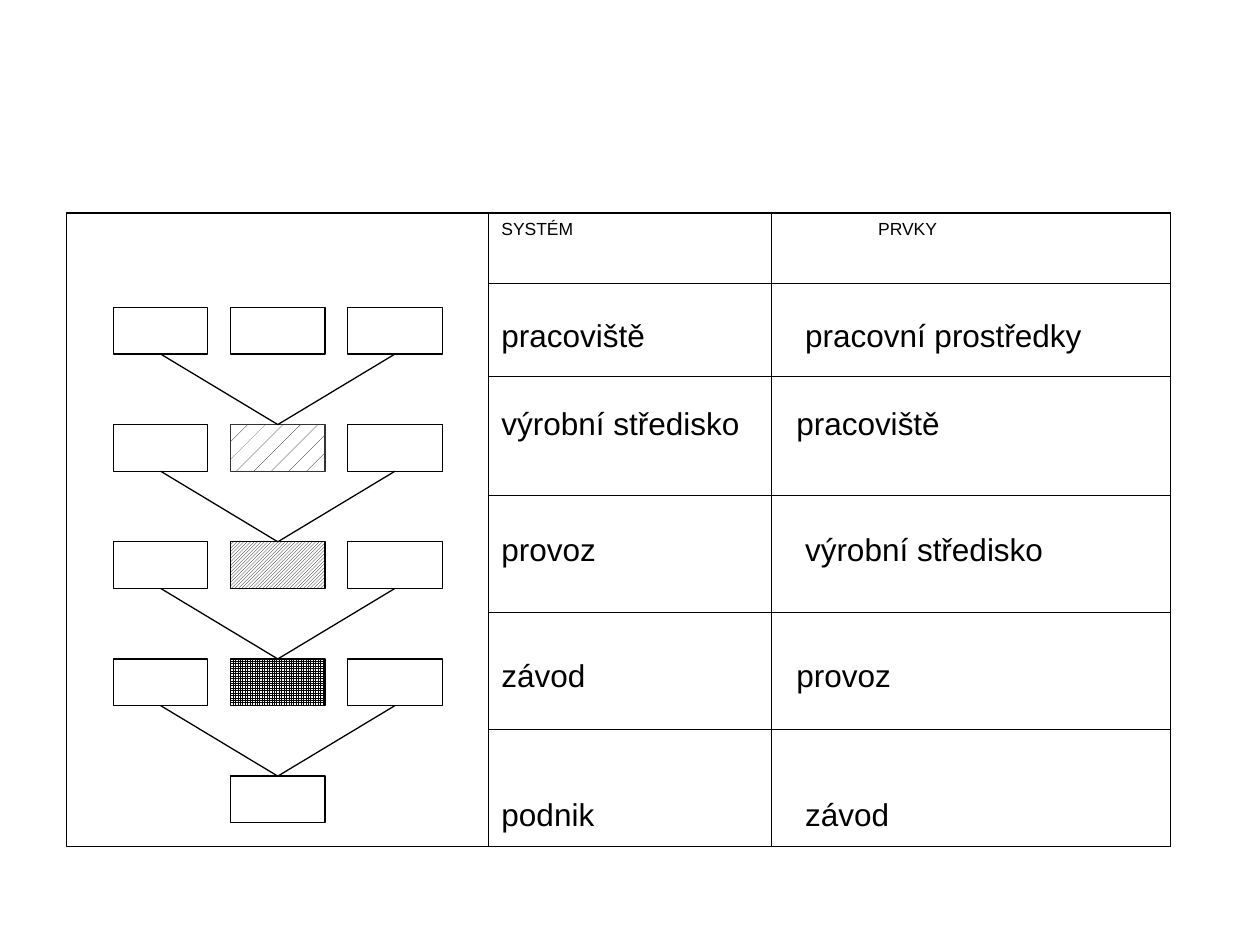
from lxml import etree
from pptx import Presentation
from pptx.dml.color import RGBColor
from pptx.enum.dml import MSO_PATTERN
from pptx.enum.shapes import MSO_CONNECTOR, MSO_SHAPE
from pptx.oxml import parse_xml
from pptx.oxml.ns import nsdecls, qn
from pptx.util import Inches, Pt


def rgb(value):
    return RGBColor.from_string(value)


def add_box(x, y, w, h, pattern=None, line="000000"):
    sp = s.shapes.add_shape(MSO_SHAPE.RECTANGLE, Inches(x), Inches(y), Inches(w), Inches(h))
    sp.shadow.inherit = False
    if pattern is None:
        sp.fill.solid()
        sp.fill.fore_color.rgb = rgb("FFFFFF")
    else:
        sp.fill.patterned()
        sp.fill.pattern = pattern
        sp.fill.fore_color.rgb = rgb("000000")
        sp.fill.back_color.rgb = rgb("FFFFFF")
    sp.line.color.rgb = rgb(line)
    sp.line.width = Pt(0.75)
    return sp


prs = Presentation()
prs.slide_width, prs.slide_height = Inches(10), Inches(7.5)
s = prs.slides.add_slide(prs.slide_layouts[6])

add_box(0.53, 1.69, 3.35, 5.03)

left, top, pitch = 0.9, 2.44, 0.93
box_w, box_h = 0.75, 0.37
middles = [
    (None, "000000"),
    (MSO_PATTERN.PERCENT_5, "333333"),
    (MSO_PATTERN.LIGHT_UPWARD_DIAGONAL, "000000"),
    (MSO_PATTERN.SMALL_GRID, "000000"),
    (None, "000000"),
]
parents = []
for level, (pattern, line) in enumerate(middles):
    y = top + level * pitch
    middle = add_box(left + pitch, y, box_w, box_h, pattern, line)
    for parent in parents:
        c = s.shapes.add_connector(MSO_CONNECTOR.STRAIGHT, 0, 0, 0, 0)
        c.begin_connect(parent, 2)
        c.end_connect(middle, 0)
        c.line.color.rgb = rgb("000000")
        c.line.width = Pt(0.75)
        etree.SubElement(c._element.spPr, qn("a:effectLst"))
    if level < len(middles) - 1:
        parents = [add_box(left + col * pitch, y, box_w, box_h) for col in (0, 2)]

rows = [
    ("SYSTÉM", "PRVKY", 10, 0.56, 0.05, 0.85),
    ("pracoviště", "pracovní prostředky", 18, 0.74, 0.28, 0.27),
    ("výrobní středisko", "pracoviště", 18, 0.94, 0.24, 0.2),
    ("provoz", "výrobní středisko", 18, 0.93, 0.3, 0.27),
    ("závod", "provoz", 18, 0.93, 0.37, 0.2),
    ("podnik", "závod", 18, 0.93, 0.54, 0.27),
]
frame = s.shapes.add_table(len(rows), 2, Inches(3.88), Inches(1.69), Inches(5.41), Inches(5.03))
table = frame.table
table.first_row = table.horz_banding = False
table.columns[0].width = Inches(2.24)
table.columns[1].width = Inches(3.17)
for i, (system, element, size, height, above, indent) in enumerate(rows):
    table.rows[i].height = Inches(height)
    for j, (text, margin) in enumerate([(system, 0.1), (element, indent)]):
        cell = table.cell(i, j)
        cell.margin_left, cell.margin_right = Inches(margin), Inches(0)
        cell.margin_top, cell.margin_bottom = Inches(above), Inches(0)
        cell.fill.solid()
        cell.fill.fore_color.rgb = rgb("FFFFFF")
        cell.text_frame.text = text
        r = cell.text_frame.paragraphs[0].runs[0]
        r.font.name, r.font.size = "Arial", Pt(size)
        r.font.color.rgb = rgb("000000")
        tcPr = cell._tc.get_or_add_tcPr()
        for k, side in enumerate(("lnL", "lnR", "lnT", "lnB")):
            tcPr.insert(k, parse_xml(
                f'<a:{side} {nsdecls("a")} w="{Pt(0.75)}"><a:solidFill>'
                f'<a:srgbClr val="000000"/></a:solidFill></a:{side}>'))

prs.save("out.pptx")
